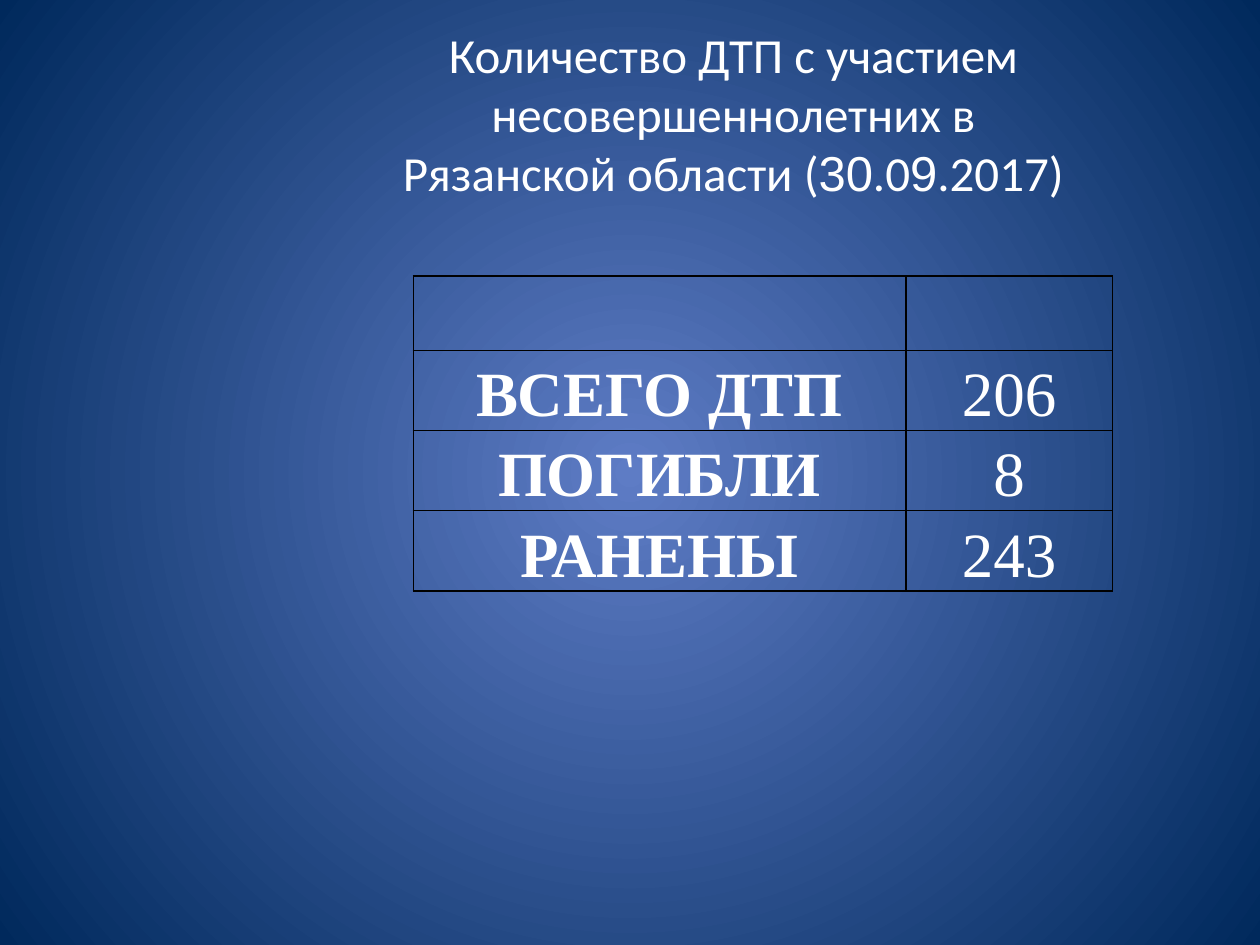
from lxml.etree import SubElement
from pptx import Presentation
from pptx.dml.color import RGBColor
from pptx.enum.text import MSO_ANCHOR as Anchor, PP_ALIGN as Align
from pptx.oxml.ns import qn
from pptx.util import Inches, Pt

WHITE = RGBColor(0xFF, 0xFF, 0xFF)
CENTER = RGBColor(0x5E, 0x7C, 0xC5)
EDGE = RGBColor(0x00, 0x29, 0x5C)
LINE = RGBColor(0x00, 0x00, 0x00)


def add_borders(cell):
    props = cell._tc.get_or_add_tcPr()
    for side in ("lnL", "lnR", "lnT", "lnB"):
        line = SubElement(props, qn(f"a:{side}"), w=str(Pt(1)))
        fill = SubElement(line, qn("a:solidFill"))
        SubElement(fill, qn("a:srgbClr"), val=str(LINE))


deck = Presentation()
deck.slide_width, deck.slide_height = Inches(10), Inches(7.5)
slide = deck.slides.add_slide(deck.slide_layouts[5])

# Radial background
back = slide.background.fill
back.gradient()
for stop, color in zip(back.gradient_stops, (CENTER, EDGE)):
    stop.color.rgb = color
lin = slide.element.find(".//" + qn("a:lin"))
grad = lin.getparent()
grad.remove(lin)
circle = SubElement(grad, qn("a:path"), path="circle")
SubElement(circle, qn("a:fillToRect"), l="50000", t="50000", r="50000", b="50000")

# Title
title = slide.shapes.title
title.left, title.top = Inches(2.97), Inches(0.3)
title.width, title.height = Inches(5.7), Inches(0.79)
frame = title.text_frame
frame.word_wrap = True
frame.vertical_anchor = Anchor.MIDDLE
frame.margin_top = Inches(0.45)
para = frame.paragraphs[0]
para.alignment = Align.CENTER
for text, face in (
    ("Количество ДТП с участием несовершеннолетних в Рязанской области (", "Calibri"),
    ("30", "Arial"),
    (".0", "Calibri"),
    ("9", "Arial"),
    (".2017)", "Calibri"),
):
    run = para.add_run()
    run.text = text
    run.font.name = face
    run.font.size = Pt(28)
    run.font.color.rgb = WHITE

# Accident table, with an empty top row
rows = (("", ""), ("ВСЕГО ДТП", "206"), ("ПОГИБЛИ", "8"), ("РАНЕНЫ", "243"))
table = slide.shapes.add_table(
    len(rows), 2, Inches(3.28), Inches(2.19), Inches(5.55), Inches(2.36)
).table
table.columns[0].width, table.columns[1].width = Inches(3.91), Inches(1.64)
for r, row in enumerate(rows):
    table.rows[r].height = Inches(0.59)
    for c, text in enumerate(row):
        cell = table.cell(r, c)
        add_borders(cell)
        cell.fill.background()
        if not text:
            continue
        cell.vertical_anchor = Anchor.MIDDLE
        cell.margin_left = cell.margin_right = Inches(0.07)
        cell.margin_top = cell.margin_bottom = 0
        para = cell.text_frame.paragraphs[0]
        para.text = text
        para.alignment = Align.CENTER
        para.line_spacing = 1.15
        font = para.runs[0].font
        font.name = "Times New Roman"
        font.size = Pt(36)
        font.bold = c == 0
        font.color.rgb = WHITE

deck.save("out.pptx")
